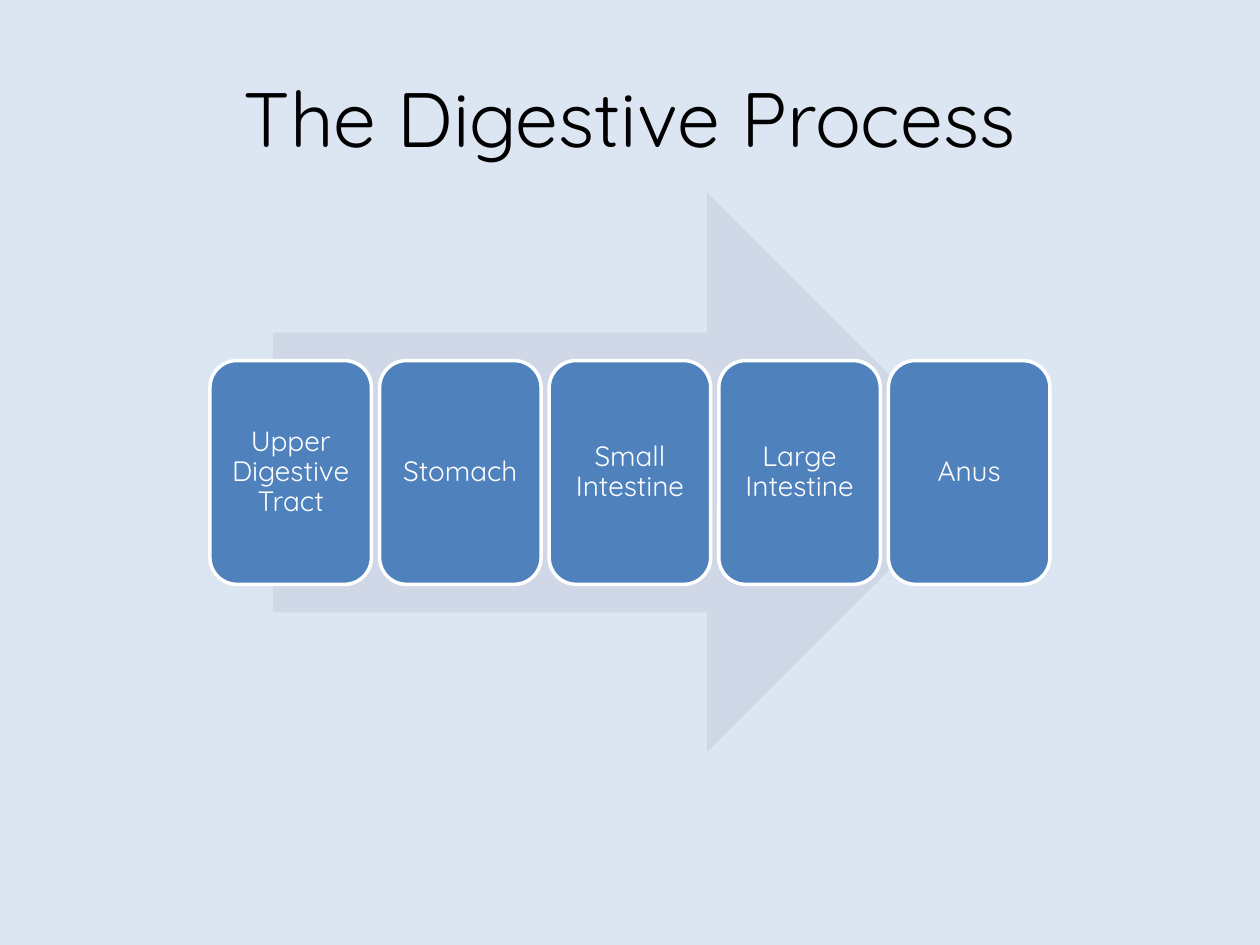
from pptx import Presentation
from pptx import util as u
from pptx.dml.color import RGBColor
from pptx.enum import shapes, text

PAGE_WIDTH, PAGE_HEIGHT = u.Inches(10), u.Inches(7.5)
FONT = "Quicksand"
BACKGROUND = RGBColor(0xDC, 0xE6, 0xF2)
ARROW_FILL = RGBColor(0xD0, 0xD8, 0xE8)
STAGE_FILL = RGBColor(0x4F, 0x81, 0xBD)
WHITE = RGBColor(0xFF, 0xFF, 0xFF)
BLACK = RGBColor(0x00, 0x00, 0x00)

STAGES = ["Upper Digestive Tract", "Stomach", "Small Intestine",
          "Large Intestine", "Anus"]


def share(left, top, width, height):
    """Turn shares of the slide's size into a box."""
    return (int(PAGE_WIDTH * left), int(PAGE_HEIGHT * top),
            int(PAGE_WIDTH * width), int(PAGE_HEIGHT * height))


def write(frame, words, size, color):
    frame.word_wrap = True
    frame.vertical_anchor = text.MSO_ANCHOR.MIDDLE
    para = frame.paragraphs[0]
    para.alignment = text.PP_ALIGN.CENTER
    span = para.add_run()
    span.text = words
    span.font.name = FONT
    span.font.size = u.Pt(size)
    span.font.color.rgb = color
    return para


def add_filled(group, kind, box, color):
    shape = group.shapes.add_shape(kind, *(int(length) for length in box))
    shape.shadow.inherit = False
    shape.fill.solid()
    shape.fill.fore_color.rgb = color
    shape.line.fill.background()
    return shape


def place_title(page, box):
    title = page.shapes.title
    title.left, title.top, title.width, title.height = box
    write(title.text_frame, "The Digestive Process", 44, BLACK)


def place_process(page, box):
    left, top, width, height = box
    group = page.shapes.add_group_shape()

    # Background arrow, centred on 85% of the width
    add_filled(group, shapes.MSO_SHAPE.RIGHT_ARROW,
               (left + width * 0.075, top, width * 0.85, height), ARROW_FILL)

    # Equal stages, with gaps of a twentieth of a stage
    count = len(STAGES)
    stage_width = width / (count + (count - 1) / 20)
    for column, words in enumerate(STAGES):
        stage = add_filled(
            group, shapes.MSO_SHAPE.ROUNDED_RECTANGLE,
            (left + column * stage_width * 1.05, top + height * 0.3,
             stage_width, height * 0.4), STAGE_FILL)
        stage.line.color.rgb = WHITE
        stage.line.width = u.Pt(2)
        frame = stage.text_frame
        frame.margin_left = frame.margin_right = u.Inches(0.07)
        frame.margin_top = frame.margin_bottom = u.Inches(0.07)
        write(frame, words, 16, WHITE).line_spacing = 0.9


def main():
    deck = Presentation()
    deck.slide_width, deck.slide_height = PAGE_WIDTH, PAGE_HEIGHT
    page = deck.slides.add_slide(deck.slide_layouts[5])
    page.background.fill.solid()
    page.background.fill.fore_color.rgb = BACKGROUND

    place_title(page, share(0.05, 0.04, 0.9, 1 / 6))
    place_process(page, share(1 / 6, 0.204, 2 / 3, 0.592))
    deck.save("out.pptx")


if __name__ == "__main__":
    main()
